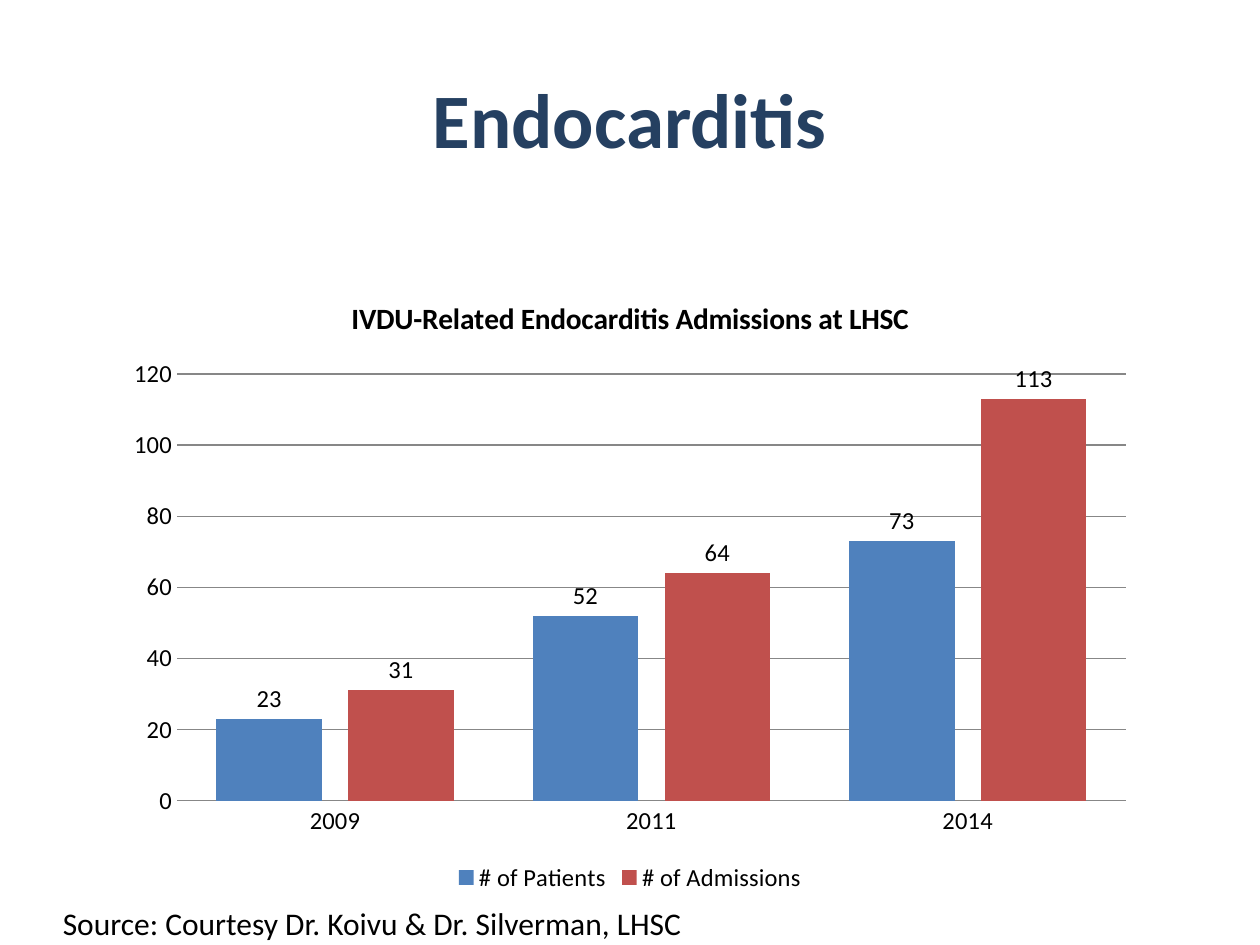
"""Build a slide charting endocarditis admissions by year."""
from pptx import Presentation
from pptx.chart.data import CategoryChartData
from pptx.dml.color import RGBColor
from pptx.enum.chart import XL_CHART_TYPE, XL_LABEL_POSITION, XL_LEGEND_POSITION, XL_TICK_MARK
from pptx.enum.text import MSO_ANCHOR, PP_ALIGN
from pptx.util import Inches, Pt


def tint(code):
    return RGBColor.from_string(code)


class Deck:
    face = "Calibri"
    ink, navy, grid = "000000", "254061", "878787"
    fills = "4F81BD", "C0504D"

    def __init__(self):
        self.prs = Presentation()
        self.prs.slide_width, self.prs.slide_height = Inches(10), Inches(7.5)
        self.slide = self.prs.slides.add_slide(self.prs.slide_layouts[5])

    def box(self, left, top, width, height):
        wide, high = self.prs.slide_width, self.prs.slide_height
        return int(left * wide), int(top * high), int(width * wide), int(height * high)

    def style(self, font, size, color=ink, bold=False):
        font.name, font.size, font.bold = self.face, Pt(size), bold
        font.color.rgb = tint(color)

    def title(self, text, *area):
        shape = self.slide.shapes.title
        shape.left, shape.top, shape.width, shape.height = self.box(*area)
        frame = shape.text_frame
        frame.text = text
        frame.vertical_anchor = MSO_ANCHOR.MIDDLE
        frame.paragraphs[0].alignment = PP_ALIGN.CENTER
        self.style(frame.paragraphs[0].runs[0].font, 44, self.navy, True)

    def note(self, text, *area):
        frame = self.slide.shapes.add_textbox(*self.box(*area)).text_frame
        frame.word_wrap = True
        frame.text = text
        self.style(frame.paragraphs[0].runs[0].font, 18)

    def chart(self, head, cats, rows, *area):
        data = CategoryChartData()
        data.categories = cats
        for name, vals in rows.items():
            data.add_series(name, vals)
        kind = XL_CHART_TYPE.COLUMN_CLUSTERED
        chart = self.slide.shapes.add_chart(kind, *self.box(*area), data).chart
        self.style(chart.font, 14)
        chart.has_title = True
        frame = chart.chart_title.text_frame
        frame.text = head
        self.style(frame.paragraphs[0].runs[0].font, 16.8, bold=True)
        chart.chart_title.include_in_layout = False
        chart.has_legend = True
        chart.legend.position = XL_LEGEND_POSITION.BOTTOM
        chart.legend.include_in_layout = False
        self.style(chart.legend.font, 14)
        self.axes(chart)
        self.bars(chart.plots[0])

    def axes(self, chart):
        for axis in (chart.category_axis, chart.value_axis):
            axis.major_tick_mark = axis.minor_tick_mark = XL_TICK_MARK.NONE
            self.style(axis.tick_labels.font, 14)
        chart.category_axis.format.line.color.rgb = tint(self.grid)
        value = chart.value_axis
        value.minimum_scale, value.maximum_scale, value.major_unit = 0, 120, 20
        value.format.line.fill.background()
        value.has_major_gridlines = True
        value.major_gridlines.format.line.color.rgb = tint(self.grid)

    def bars(self, plot):
        plot.gap_width, plot.overlap = 75, -25
        plot.vary_by_categories = False
        for row, fill in zip(plot.series, self.fills):
            row.format.fill.solid()
            row.format.fill.fore_color.rgb = tint(fill)
            labels = row.data_labels
            labels.show_value = True
            labels.position = XL_LABEL_POSITION.OUTSIDE_END
            self.style(labels.font, 14)


def main():
    deck = Deck()
    deck.title("Endocarditis", 0.05, 0.04, 0.9, 0.17)
    rows = {"# of Patients": (23, 52, 73), "# of Admissions": (31, 64, 113)}
    deck.chart("IVDU-Related Endocarditis Admissions at LHSC", ("2009", "2011", "2014"),
               rows, 0.09, 0.29, 0.82, 0.66)
    deck.note("Source: Courtesy Dr. Koivu & Dr. Silverman, LHSC", 0.04, 0.95, 0.73, 0.05)
    deck.prs.save("out.pptx")


if __name__ == "__main__":
    main()
